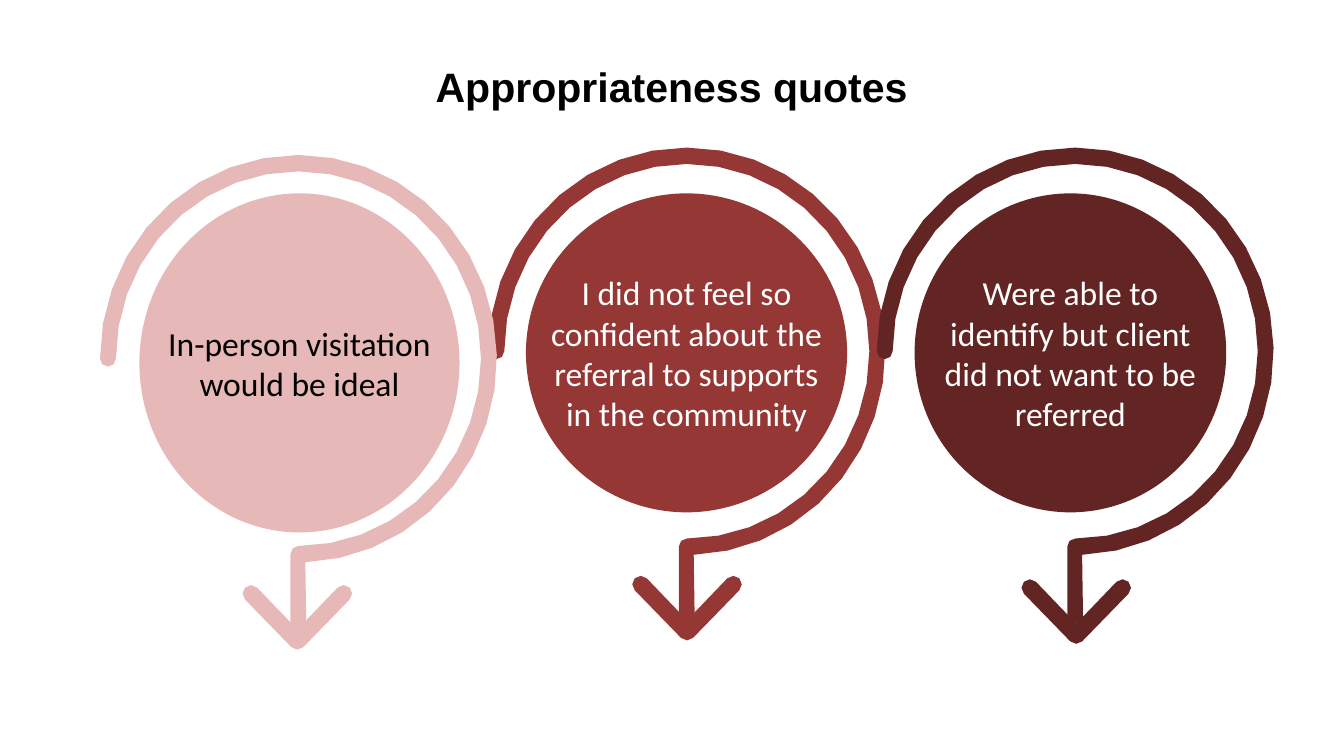
from math import cos, radians, sin

from pptx import Presentation
from pptx.dml.color import RGBColor
from pptx.enum.shapes import MSO_SHAPE
from pptx.enum.text import MSO_ANCHOR, PP_ALIGN
from pptx.util import Cm, Pt

OVAL = MSO_SHAPE.OVAL
CENTER = PP_ALIGN.CENTER
TOP = MSO_ANCHOR.TOP
MIDDLE = MSO_ANCHOR.MIDDLE

COLORS = {
    "pink": "E6B9B8",
    "red": "953735",
    "wine": "632523",
    "black": "000000",
    "white": "FFFFFF",
}

FIRST = 11.28
STEP = 14.68

# slot, fill, font colour, hook y, disk (x, y, rx, ry), tip (x, y), quote
QUOTES = [
    (1, "red", "white", 13.28, (25.95, 13.34, 6.07, 6.03), (25.97, 21.77),
     "I did not feel so confident about the referral to supports in the community"),
    (0, "pink", "black", 13.56, (11.32, 13.72, 6.05, 6.41), (11.24, 22.12),
     "In-person visitation would be ideal"),
    (2, "wine", "white", 13.28, (40.46, 13.34, 5.89, 6.03), (40.68, 21.9),
     "Were able to identify but client did not want to be referred"),
]


def color(name):
    return RGBColor.from_string(COLORS[name])


def arc(x, y, rx, ry, start, end):
    count = round(abs(end - start) / (10 if rx > 1 else 45))
    turns = [radians(start + (end - start) * i / count) for i in range(count + 1)]
    return [(x + rx * cos(t), y + ry * sin(t)) for t in turns]


def paint(shape, fill):
    shape.shadow.inherit = False
    shape.fill.solid()
    shape.fill.fore_color.rgb = color(fill)
    shape.line.fill.background()


def add_form(slide, points, fill):
    points = [(Cm(x), Cm(y)) for x, y in points]
    build = slide.shapes.build_freeform(*points[0])
    build.add_line_segments(points[1:], close=True)
    paint(build.convert_to_shape(), fill)


def add_text(slide, area, text, face, size, ink, anchor, inset, bold=False):
    box = slide.shapes.add_textbox(*map(Cm, area))
    frame = box.text_frame
    frame.word_wrap = True
    frame.vertical_anchor = anchor
    frame.margin_left = frame.margin_right = Cm(inset)
    frame.margin_top = frame.margin_bottom = Cm(inset)
    para = frame.paragraphs[0]
    para.text = text
    para.alignment = CENTER
    font = para.font
    font.name, font.size, font.bold = face, Pt(size), bold
    font.color.rgb = color(ink)


def add_disk(slide, disk, text, fill, ink):
    x, y, rx, ry = disk
    area = (x - rx, y - ry, 2 * rx, 2 * ry)
    paint(slide.shapes.add_shape(OVAL, *map(Cm, area)), fill)
    add_text(slide, area, text, "Calibri", 36, ink, MIDDLE, 0.5)


def add_hook(slide, x, y, fill):
    half = 0.3
    points = arc(x, y, 7.5, 7.7, 270, 180)
    points += arc(x - 7.2, y, half, half, 180, 0)
    points += arc(x, y, 6.9, 7.08, 180, 450)
    points += arc(x, y + 7.38, half, half, 270, 180)
    points += [(x - half, y + 10.29), (x + half, y + 10.29)]
    points += arc(x, y, 7.5, 7.7, 88, -90)
    add_form(slide, points, fill)


def add_tip(slide, x, y, fill):
    end = 0.32
    points = arc(x + 1.75, y + end, end, end, 225, 405)
    points += arc(x, y + 2.12, end, end, 45, 135)
    points += arc(x - 1.75, y + end, end, end, 135, 315)
    points.append((x, y + 1.68))
    add_form(slide, points, fill)


def main():
    deck = Presentation()
    deck.slide_width, deck.slide_height = Cm(50.8), Cm(28.58)
    slide = deck.slides.add_slide(deck.slide_layouts[6])
    add_text(slide, (-2.1, 2.08, 55, 3.2), "Appropriateness quotes",
             "Arial", 44, "black", TOP, 0.25, True)
    for slot, fill, ink, y, disk, tip, text in QUOTES:
        add_disk(slide, disk, text, fill, ink)
        add_hook(slide, FIRST + slot * STEP, y, fill)
        add_tip(slide, *tip, fill)
    deck.save("out.pptx")


if __name__ == "__main__":
    main()
